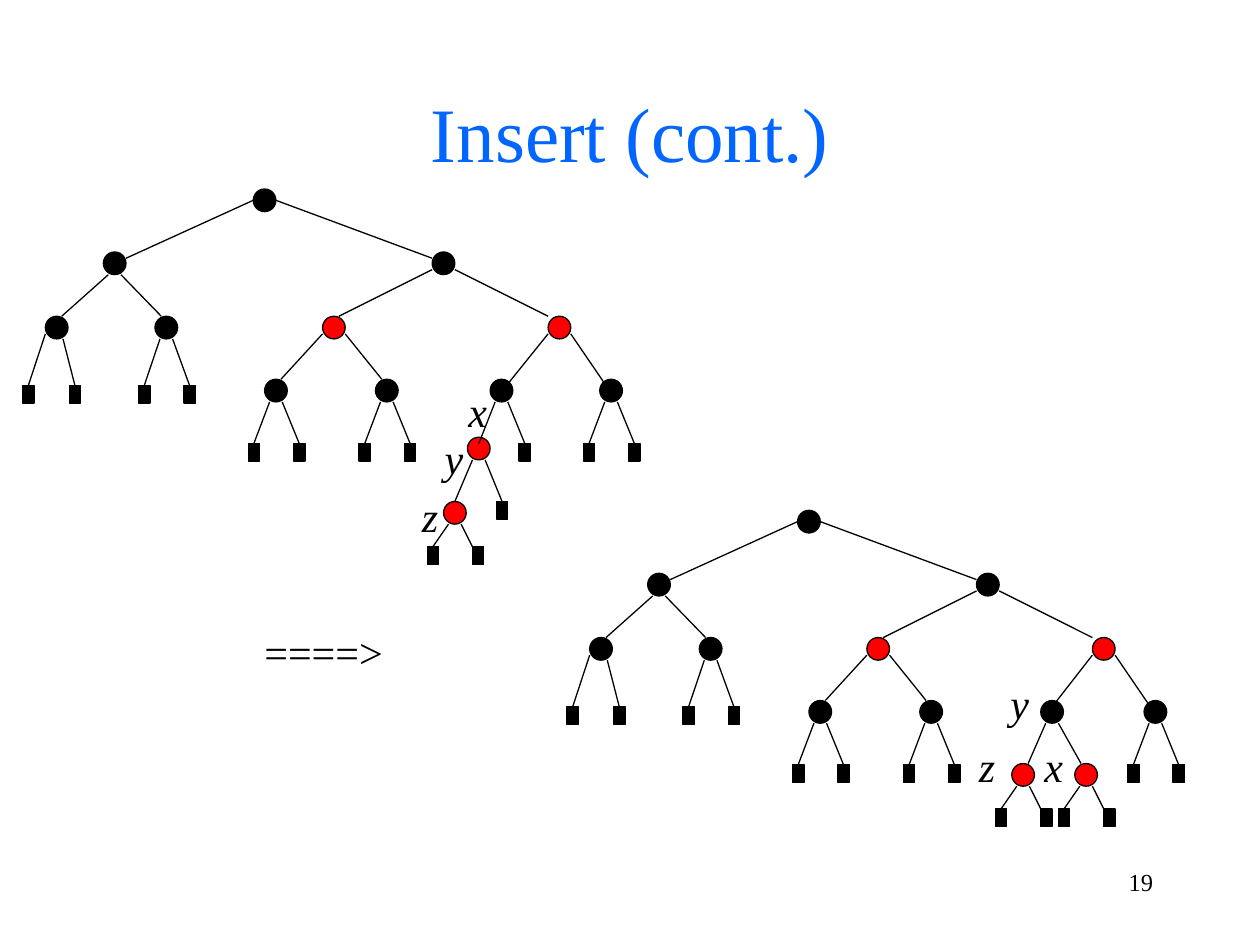
from dataclasses import dataclass

from lxml.etree import SubElement
from pptx import Presentation
from pptx.dml.color import RGBColor as RGB
from pptx.enum.shapes import MSO_CONNECTOR as Wire, MSO_SHAPE as Kind
from pptx.enum.text import MSO_ANCHOR as Anchor, PP_ALIGN as Align
from pptx.oxml.ns import qn
from pptx.util import Inches, Pt


@dataclass(frozen=True)
class Theme:
    font: str = "Times New Roman"
    black: RGB = RGB(0, 0, 0)
    red: RGB = RGB(255, 0, 0)
    blue: RGB = RGB(0, 0x66, 255)
    title: int = 44
    body: int = 24
    page: int = 14
    line: float = 0.75


THEME = Theme()
DOT = 0.18
LEAF = (0.09, 0.14)
LEFT, RIGHT = 0, 1

# Where an edge leaves its parent, on the right side; the left side mirrors it
MID, LOW, FOOT = (DOT, 0.09), (DOT, 0.14), (0.14, DOT)
# Where an edge meets a right child
TOP, CORNER, SIDE, INNER = (0.05, 0), (0, 0), (0, 0.05), (0.05, 0.05)

# Black nodes, then red nodes, shared by both trees
BLACK = {
    "root": (2.01, 1.5), "l": (0.82, 2), "r": (3.43, 2),
    "ll": (0.36, 2.51), "lr": (1.23, 2.51),
    "rll": (2.1, 3.01), "rlr": (2.98, 3.01), "rrr": (4.76, 3.01),
}
RED = {"rl": (2.56, 2.51), "rr": (4.35, 2.51)}
EDGES = [
    ("root", "l", LEFT, MID, SIDE), ("root", "r", RIGHT, MID, SIDE),
    ("l", "ll", LEFT, FOOT, TOP), ("l", "lr", RIGHT, FOOT, TOP),
    ("r", "rl", LEFT, LOW, TOP), ("r", "rr", RIGHT, LOW, CORNER),
    ("rl", "rll", LEFT, LOW, TOP), ("rl", "rlr", RIGHT, LOW, TOP),
    ("rr", "rrr", RIGHT, LOW, INNER),
]


def paint(shape, color):
    shape.shadow.inherit = False
    shape.fill.solid()
    shape.fill.fore_color.rgb = color
    shape.line.color.rgb = THEME.black
    shape.line.width = Pt(THEME.line)
    return shape


def dot(slide, at, color):
    x, y = at
    shape = slide.shapes.add_shape(
        Kind.OVAL, Inches(x), Inches(y), Inches(DOT), Inches(DOT))
    paint(shape, color)


def line(slide, start, end):
    wire = slide.shapes.add_connector(
        Wire.STRAIGHT, *(Inches(n) for n in start + end))
    wire.line.color.rgb = THEME.black
    wire.line.width = Pt(THEME.line)
    SubElement(wire._element.spPr, qn("a:effectLst"))
    return wire


def port(at, side, spot):
    """Point on a node's rim, mirrored for the left side."""
    dx, dy = spot
    return at[0] + (dx if side == RIGHT else DOT - dx), at[1] + dy


def edge(slide, parent, child, side, leave, enter):
    line(slide, port(parent, side, leave), port(child, side, enter))


def leaf(slide, parent, side, drop=0.51, step=None, leave=FOOT, corner=False):
    """Square leaf below a node, joined at its top or its upper left corner."""
    if step is None:
        step = 0.23 if side == RIGHT else -0.13
    x, y = parent[0] + step, parent[1] + drop
    box = slide.shapes.add_shape(
        Kind.RECTANGLE, Inches(x), Inches(y), *(Inches(n) for n in LEAF))
    paint(box, THEME.black)
    wire = line(slide, port(parent, side, leave), (x, y))
    if not corner:
        wire.end_connect(box, 0)


def twigs(slide, parent):
    """Two leaves close under a red node."""
    leaf(slide, parent, LEFT, 0.36)
    leaf(slide, parent, RIGHT, 0.36, corner=True)


def text(slide, words, at, size, pt, color=THEME.black,
         align=Align.LEFT, anchor=Anchor.TOP, italic=False):
    box = slide.shapes.add_textbox(*(Inches(n) for n in at + size))
    frame = box.text_frame
    frame.word_wrap = True
    frame.vertical_anchor = anchor
    frame.text = words
    para = frame.paragraphs[0]
    para.alignment = align
    font = para.runs[0].font
    font.name, font.size, font.italic = THEME.font, Pt(pt), italic
    font.color.rgb = color


def label(slide, name, at):
    text(slide, name, at, (0.23, 0.5), THEME.body, italic=True)


def tree(slide, dx=0, dy=0):
    """Draw the shared part of a tree; return the red right-hand node."""
    nodes = {}
    for group, color in ((BLACK, THEME.black), (RED, THEME.red)):
        for name, (x, y) in group.items():
            nodes[name] = (x + dx, y + dy)
            dot(slide, nodes[name], color)
    for start, end, *how in EDGES:
        edge(slide, nodes[start], nodes[end], *how)
    for name in ("rll", "rlr", "rrr"):
        for side in (LEFT, RIGHT):
            leaf(slide, nodes[name], side)
    for side in (LEFT, RIGHT):
        leaf(slide, nodes["lr"], side, 0.55)
    leaf(slide, nodes["ll"], LEFT, 0.55, -0.18, LOW)
    leaf(slide, nodes["ll"], RIGHT, 0.55, 0.19)
    return nodes["rr"]


def before(slide):
    top = tree(slide)
    z, y, x = (3.52, 3.98), (3.71, 3.47), (3.89, 3.01)
    for at, color in ((x, THEME.black), (y, THEME.red), (z, THEME.red)):
        dot(slide, at, color)
    edge(slide, top, x, LEFT, LOW, INNER)
    edge(slide, x, y, LEFT, FOOT, (0.09, 0.05))
    edge(slide, y, z, LEFT, FOOT, (0.09, 0))
    leaf(slide, x, RIGHT)
    leaf(slide, y, RIGHT)
    twigs(slide, z)
    label(slide, "x", (3.62, 3.01))
    label(slide, "y", (3.43, 3.38))
    label(slide, "z", (3.25, 3.84))


def after(slide):
    top = tree(slide, 4.32, 2.55)
    z, y, x = (8.03, 6.06), (8.26, 5.56), (8.53, 6.06)
    for at, color in ((y, THEME.black), (z, THEME.red), (x, THEME.red)):
        dot(slide, at, color)
    edge(slide, top, y, LEFT, LOW, (0.09, 0.05))
    for child, side in ((z, LEFT), (x, RIGHT)):
        edge(slide, y, child, side, FOOT, TOP)
        twigs(slide, child)
    label(slide, "y", (7.92, 5.33))
    label(slide, "z", (7.67, 5.83))
    label(slide, "x", (8.19, 5.83))


def main():
    deck = Presentation()
    deck.slide_width, deck.slide_height = Inches(10), Inches(7.5)
    slide = deck.slides.add_slide(deck.slide_layouts[6])
    text(slide, "19", (7.17, 6.83), (2.08, 0.5), THEME.page, align=Align.RIGHT)
    text(slide, "Insert (cont.)", (0.75, 0.42), (8.5, 1.25), THEME.title,
         THEME.blue, Align.CENTER, Anchor.MIDDLE)
    before(slide)
    after(slide)
    text(slide, "====>", (2, 4.92), (2.08, 0.5), THEME.body)
    deck.save("out.pptx")


if __name__ == "__main__":
    main()
